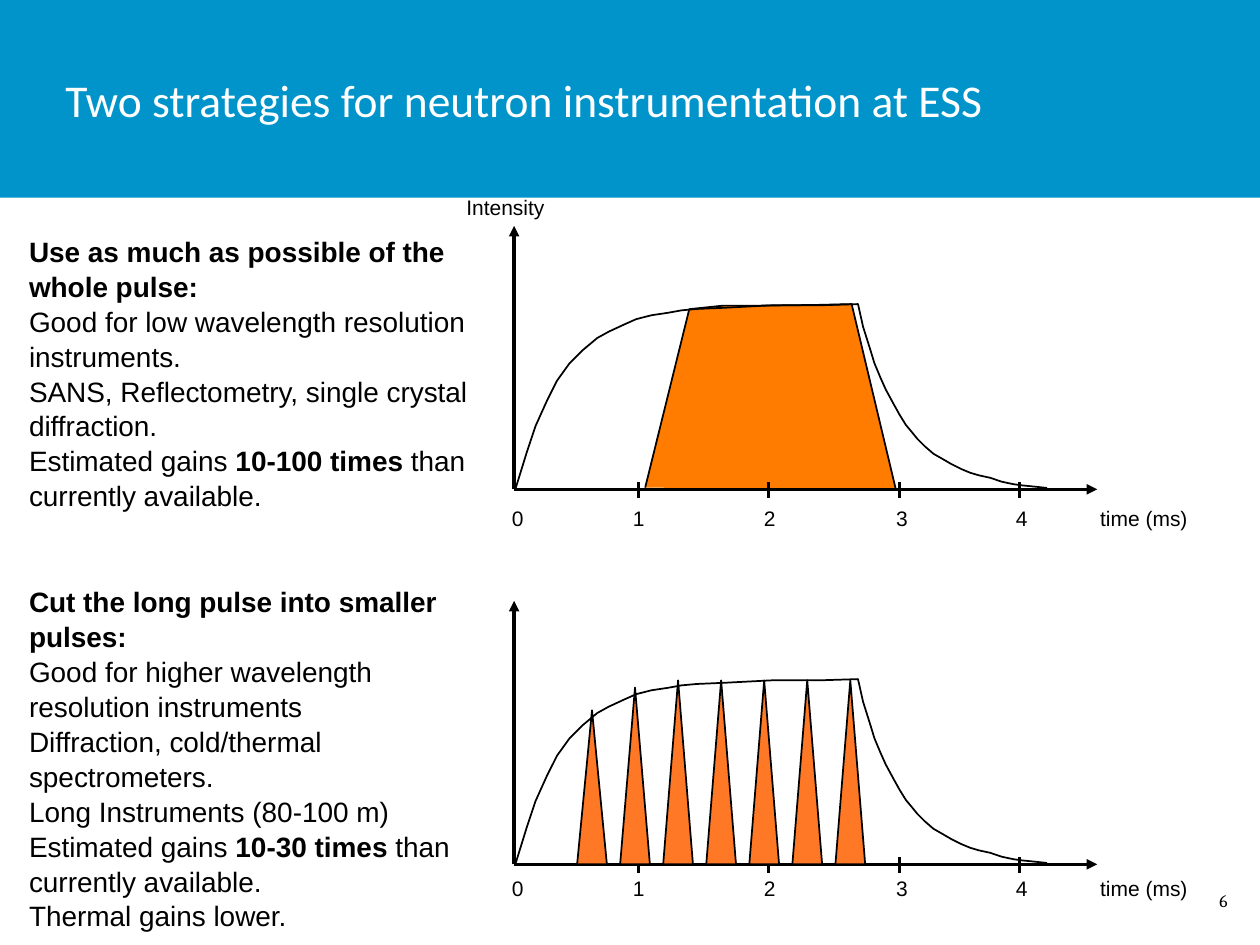
from dataclasses import dataclass
from typing import NamedTuple, Optional

from lxml.etree import SubElement as add_child
from pptx import Presentation
from pptx.dml.color import RGBColor as Rgb
from pptx.enum.shapes import MSO_CONNECTOR as Connector, MSO_SHAPE as Preset
from pptx.enum.text import MSO_ANCHOR as Anchor, PP_ALIGN as Align
from pptx.oxml.ns import qn
from pptx.util import Pt


@dataclass(frozen=True)
class Theme:
    banner: Rgb = Rgb(0x00, 0x94, 0xCA)
    white: Rgb = Rgb(0xFF, 0xFF, 0xFF)
    black: Rgb = Rgb(0x00, 0x00, 0x00)
    whole_pulse: Rgb = Rgb(0xFF, 0x7C, 0x00)
    short_pulse: Rgb = Rgb(0xFF, 0x78, 0x26)
    title_size: int = 26
    body_size: int = 16
    label_size: int = 12
    number_size: int = 10
    axis_width: int = 2
    outline_width: int = 1


THEME = Theme()


class Span(NamedTuple):
    text: str
    bold: bool = False


class Style(NamedTuple):
    font: str
    size: int
    color: Rgb = THEME.black
    inset: float = 0
    indent: float = 0
    anchor: Anchor = Anchor.TOP
    align: Align = Align.LEFT
    spacing: float = 1.0


class Area(NamedTuple):
    left: float
    top: float
    width: float
    height: float


class Graph(NamedTuple):
    base: float
    label_top: float


TITLE = Style("Calibri", THEME.title_size, THEME.white, anchor=Anchor.MIDDLE)
BODY = Style("Arial", THEME.body_size, inset=3.6, indent=3, spacing=1.04)
LABEL = Style("Arial", THEME.label_size, inset=1.5, indent=3)
NUMBER = Style("Cambria", THEME.number_size, inset=3.6,
               anchor=Anchor.MIDDLE, align=Align.RIGHT)

# Graph geometry: outlines are (distance from origin, height above base)
AXIS_LEFT, AXIS_RIGHT, AXIS_HEIGHT = 293.8, 627, 150.5
ORIGIN = 294.5
WHOLE = Graph(279.6, 287.3)
CUT = Graph(493.9, 499)
TICKS = [365, 439.2, 514.1, 582.5]
LABEL_LEFTS = [288, 357.1, 432, 507.6, 576]
PULSE = [
    (0, 0), (6.5, 21), (11.5, 36), (18, 50.4), (23.8, 62), (31, 72),
    (38.2, 79.2), (46.8, 86.4), (53.3, 90), (62.6, 94.3), (69.1, 97.2),
    (77.8, 99.4), (87.1, 100.8), (95, 102.2), (103.7, 103), (119.5, 103.7),
    (133.2, 104.4), (146.9, 105.1), (174.2, 105.1), (195.8, 105.8),
    (198.7, 92.9), (203, 79.2), (205.2, 72), (208.8, 63.4), (211.7, 56.9),
    (216, 49), (219.6, 42.5), (223.2, 36.7), (226.8, 32.4), (229.7, 28.8),
    (234, 24.5), (239, 20.2), (244.1, 17.3), (249.1, 14.4), (254.9, 11.5),
    (259.9, 9.4), (265, 7.9), (271.4, 6.5), (277.9, 4.3), (284.4, 2.9),
    (289.4, 2.2), (297.4, 1.4), (303.8, 0.7),
]
USED_PART = [(74.2, 0.9), (99.4, 102.9), (118.8, 104.9), (140.4, 104.9),
             (172.1, 105.3), (192.2, 105.8), (217.4, 0)]
SPIKE_HEIGHTS = [88, 101] + [105.1] * 5
SPIKE_START, SPIKE_PITCH, SPIKE_WIDTH = 35.3, 24.6, 17

WHOLE_TEXT = [
    [Span("Use as much as possible of the whole pulse:", True)],
    [Span("Good for low wavelength resolution instruments.")],
    [Span("SANS, Reflectometry, single crystal diffraction.")],
    [Span("Estimated gains "), Span("10-100 times", True),
     Span(" than currently available.")],
]
CUT_TEXT = [
    [Span("Cut the long pulse into smaller pulses:", True)],
    [Span("Good for higher wavelength resolution instruments")],
    [Span("Diffraction, cold/thermal spectrometers.")],
    [Span("Long Instruments (80-100 m)")],
    [Span("Estimated gains"), Span(" 10-30 times", True),
     Span(" than currently available.")],
    [Span("Thermal gains lower.")],
]


def apply(target, values: dict) -> None:
    for name, value in values.items():
        setattr(target, name, value)


def add_text(page, area: Area, paragraphs: list[list[Span]], style: Style) -> None:
    box = page.shapes.add_textbox(*map(Pt, area))
    frame = box.text_frame
    sides = ("left", "top", "right", "bottom")
    apply(frame, {f"margin_{side}": Pt(style.inset) for side in sides})
    apply(frame, {"word_wrap": True, "vertical_anchor": style.anchor})
    for index, spans in enumerate(paragraphs):
        para = frame.add_paragraph() if index else frame.paragraphs[0]
        apply(para, {"alignment": style.align, "line_spacing": style.spacing})
        if style.indent:
            para._p.get_or_add_pPr().set("marL", str(Pt(style.indent)))
        for span in spans:
            run = para.add_run()
            run.text = span.text
            apply(run.font, {"name": style.font, "size": Pt(style.size),
                             "bold": span.bold})
            run.font.color.rgb = style.color


def add_line(page, start: tuple[float, float], end: tuple[float, float],
             arrow: bool = False) -> None:
    line = page.shapes.add_connector(Connector.STRAIGHT, *map(Pt, start + end))
    line.line.width = Pt(THEME.axis_width)
    line.line.color.rgb = THEME.black
    if arrow:
        add_child(line.line._get_or_add_ln(), qn("a:tailEnd"), type="triangle")
    add_child(line._element.spPr, qn("a:effectLst"))


def add_outline(page, base: float, points: list[tuple[float, float]],
                fill: Optional[Rgb] = None, close: bool = False) -> None:
    spots = [(Pt(ORIGIN + x), Pt(base - height)) for x, height in points]
    builder = page.shapes.build_freeform(*spots[0])
    builder.add_line_segments(spots[1:], close=close)
    shape = builder.convert_to_shape()
    shape.shadow.inherit = False
    if fill is None:
        shape.fill.background()
    else:
        shape.fill.solid()
        shape.fill.fore_color.rgb = fill
    shape.line.width = Pt(THEME.outline_width)
    shape.line.color.rgb = THEME.black


def add_graph(page, graph: Graph) -> None:
    base, top = graph
    for x in TICKS:
        add_line(page, (x, base - 4), (x, base + 4.8))
    add_line(page, (AXIS_LEFT, base), (AXIS_LEFT, base - AXIS_HEIGHT), True)
    add_line(page, (AXIS_LEFT, base), (AXIS_RIGHT, base), True)
    add_outline(page, base, PULSE)
    for number, left in enumerate(LABEL_LEFTS):
        add_text(page, Area(left, top, 17, 18), [[Span(str(number))]], LABEL)
    add_text(page, Area(624.2, top, 86, 20), [[Span("time (ms)")]], LABEL)


def main() -> None:
    deck = Presentation()
    apply(deck, {"slide_width": Pt(720), "slide_height": Pt(540)})
    page = deck.slides.add_slide(deck.slide_layouts[6])

    # Title banner
    banner = page.shapes.add_shape(Preset.RECTANGLE, *map(Pt, (0, 0, 720, 113)))
    banner.shadow.inherit = False
    banner.fill.solid()
    banner.fill.fore_color.rgb = THEME.banner
    banner.line.fill.background()
    add_text(page, Area(37.4, 0, 554, 113.8),
             [[Span("Two strategies for neutron instrumentation at ESS")]], TITLE)

    # Whole pulse graph
    add_outline(page, WHOLE.base, USED_PART, THEME.whole_pulse)
    add_graph(page, WHOLE)
    add_text(page, Area(262, 109.4, 86, 24), [[Span("Intensity")]], LABEL)

    # Cut pulse graph
    add_graph(page, CUT)
    for index, height in enumerate(SPIKE_HEIGHTS):
        left = SPIKE_START + index * SPIKE_PITCH
        spike = [(left, 0), (left + SPIKE_WIDTH, 0), (left + SPIKE_WIDTH / 2, height)]
        add_outline(page, CUT.base, spike, THEME.short_pulse, close=True)

    # Explanations and page number
    add_text(page, Area(10, 129.6, 263.5, 162), WHOLE_TEXT, BODY)
    add_text(page, Area(10, 329.8, 263.5, 201), CUT_TEXT, BODY)
    add_text(page, Area(684, 504, 21, 21.6), [[Span("6")]], NUMBER)

    deck.save("out.pptx")


if __name__ == "__main__":
    main()
